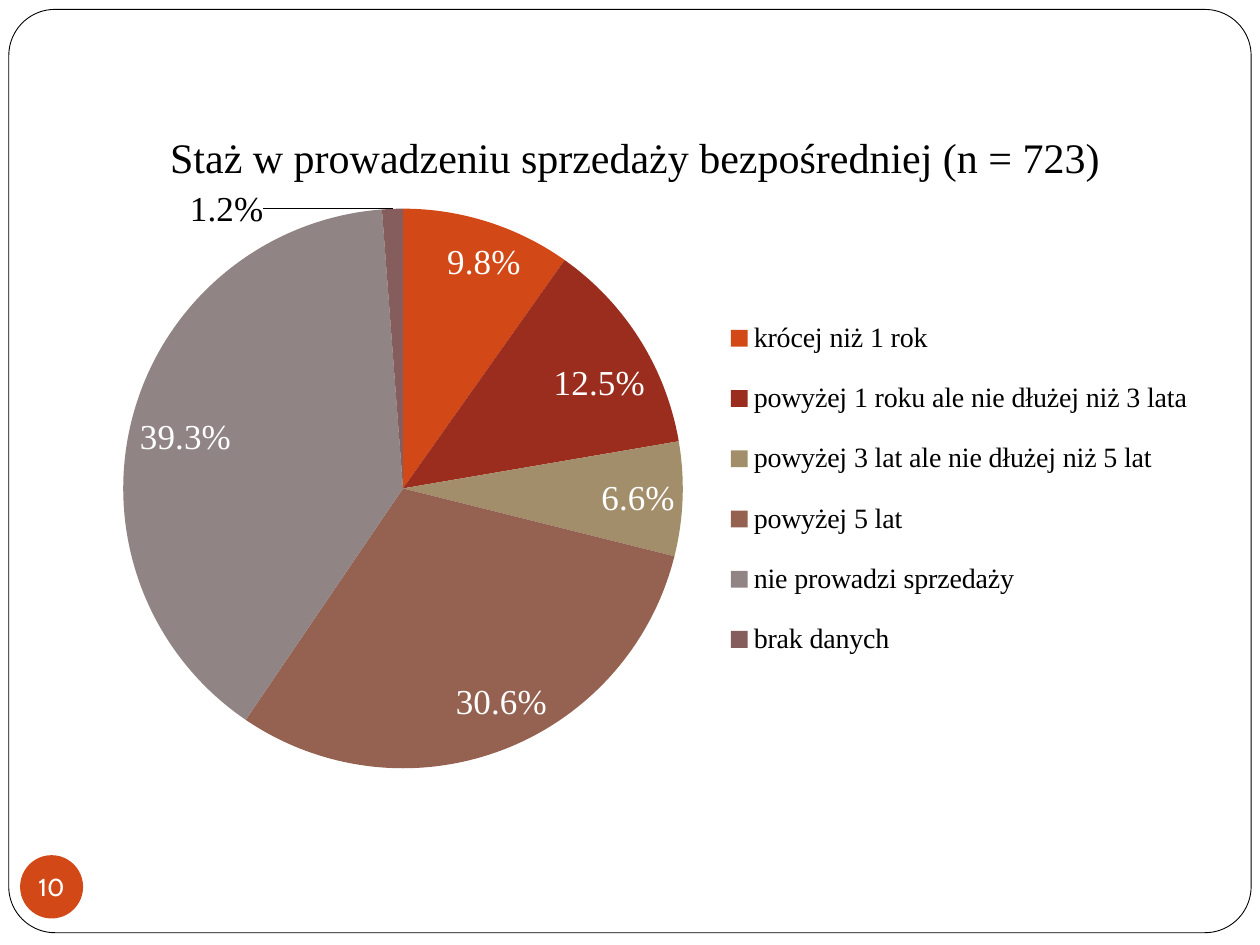
"""Build a slide with a pie chart of experience in direct sales."""
from dataclasses import dataclass
from typing import Any, NamedTuple

import pptx
import pptx.chart.data
import pptx.dml.color
import pptx.enum.chart
import pptx.enum.shapes
import pptx.enum.text
import pptx.oxml
import pptx.oxml.ns
import pptx.util


@dataclass(frozen=True)
class Theme:
    ink: str = "000000"
    paper: str = "FFFFFF"
    accent: str = "D34817"
    chart_font: str = "Times New Roman"
    number_font: str = "Cabin"
    title_size: int = 24
    label_size: int = 20
    legend_size: int = 16
    number_size: int = 14


class Box(NamedTuple):
    left: float
    top: float
    width: float
    height: float


class Slice(NamedTuple):
    category: str
    share: float
    color: str
    label_shift: tuple[float, float] | None = None
    label_outside: bool = False


THEME = Theme()
SLIDE_WIDTH = pptx.util.Inches(10)
SLIDE_HEIGHT = pptx.util.Inches(7.5)
TITLE = "Staż w prowadzeniu sprzedaży bezpośredniej (n = 723)"
SLICES = [
    Slice("krócej niż 1 rok", 0.098, THEME.accent, (0.03, 0.02)),
    Slice("powyżej 1 roku ale nie dłużej niż 3 lata", 0.125, "9B2D1F", (0.01, 0.03)),
    Slice("powyżej 3 lat ale nie dłużej niż 5 lat", 0.066, "A28E6A"),
    Slice("powyżej 5 lat", 0.306, "956251", (0.04, -0.03)),
    Slice("nie prowadzi sprzedaży", 0.393, "918485"),
    Slice("brak danych", 0.012, "855D5D", (-0.14, 0.04), True),
]


def rgb(color: str) -> pptx.dml.color.RGBColor:
    return pptx.dml.color.RGBColor.from_string(color)


def place(box: Box) -> tuple[int, int, int, int]:
    """Turn shares of the slide into lengths."""
    return (int(box.left * SLIDE_WIDTH), int(box.top * SLIDE_HEIGHT),
            int(box.width * SLIDE_WIDTH), int(box.height * SLIDE_HEIGHT))


def style_font(font: Any, size: int, color: str, face: str = THEME.chart_font) -> None:
    font.size = pptx.util.Pt(size)
    font.name = face
    font.bold = False
    font.color.rgb = rgb(color)


def write(frame: Any, text: str, *, size: int, color: str,
          face: str = THEME.chart_font, wrap: bool = False) -> None:
    """Put one centred line of formatted text in a frame without margins."""
    frame.margin_left = frame.margin_right = frame.margin_top = frame.margin_bottom = 0
    frame.word_wrap = wrap
    frame.vertical_anchor = pptx.enum.text.MSO_ANCHOR.MIDDLE
    line = frame.paragraphs[0]
    line.alignment = pptx.enum.text.PP_ALIGN.CENTER
    run = line.add_run()
    run.text = text
    style_font(run.font, size, color, face)


def draw_shape(slide: Any, kind: Any, box: Box, fill: str, line: str | None = None) -> Any:
    shape = slide.shapes.add_shape(kind, *place(box))
    shape.shadow.inherit = False
    shape.fill.solid()
    shape.fill.fore_color.rgb = rgb(fill)
    if line:
        shape.line.color.rgb = rgb(line)
        shape.line.width = pptx.util.Pt(0.5)
    else:
        shape.line.fill.background()
    return shape


def set_layout(element: Any, position: int, modes: dict[str, str],
               **shares: float) -> None:
    """Give a chart part a manual layout in shares of the chart."""
    for old in element.findall(pptx.oxml.ns.qn("c:layout")):
        element.remove(old)
    settings = "".join(f'<c:{tag} val="{value}"/>'
                       for tag, value in {**modes, **shares}.items())
    element.insert(position, pptx.oxml.parse_xml(
        f'<c:layout {pptx.oxml.ns.nsdecls("c")}>'
        f'<c:manualLayout>{settings}</c:manualLayout></c:layout>'))


def label_slices(series: Any) -> None:
    """Show shares inside the slices and move the labels that need room."""
    positions = pptx.enum.chart.XL_LABEL_POSITION
    labels = series.data_labels
    labels.show_value = True
    labels.number_format = "0.0%"
    labels.number_format_is_linked = False
    labels.position = positions.INSIDE_END
    style_font(labels.font, THEME.label_size, THEME.paper)

    moved = [(index, part) for index, part in enumerate(SLICES) if part.label_shift]
    for index, part in moved:
        label = series.points[index].data_label
        style_font(label.font, THEME.label_size,
                   THEME.ink if part.label_outside else THEME.paper)
        label.position = (positions.OUTSIDE_END if part.label_outside
                          else positions.INSIDE_END)
    label_nodes = labels._element.findall(pptx.oxml.ns.qn("c:dLbl"))
    for (_, part), node in zip(moved, label_nodes):
        shift_x, shift_y = part.label_shift
        set_layout(node, 1, {}, x=shift_x, y=shift_y)
        node.insert(2, pptx.oxml.parse_xml(
            f'<c:numFmt {pptx.oxml.ns.nsdecls("c")} formatCode="0.0%" sourceLinked="0"/>'))


def draw_pie(slide: Any, box: Box) -> None:
    data = pptx.chart.data.CategoryChartData(number_format="0.0%")
    data.categories = [part.category for part in SLICES]
    data.add_series("Series 1", [part.share for part in SLICES])
    chart = slide.shapes.add_chart(
        pptx.enum.chart.XL_CHART_TYPE.PIE, *place(box), data).chart
    style_font(chart.font, 10, THEME.ink)
    chart.has_title = False
    edges = {"xMode": "edge", "yMode": "edge"}

    chart.has_legend = True
    legend = chart.legend
    legend.position = pptx.enum.chart.XL_LEGEND_POSITION.RIGHT
    legend.include_in_layout = False
    style_font(legend.font, THEME.legend_size, THEME.ink)
    set_layout(legend._element, 1, edges, x=0.57, y=0.27, w=0.41, h=0.56)

    plot_area = chart._chartSpace.chart.plotArea
    set_layout(plot_area, 0, {"layoutTarget": "inner", **edges},
               x=0.067, y=0.143, w=0.474, h=0.813)

    series = chart.plots[0].series[0]
    for index, part in enumerate(SLICES):
        fill = series.points[index].format.fill
        fill.solid()
        fill.fore_color.rgb = rgb(part.color)
    label_slices(series)


def main() -> None:
    deck = pptx.Presentation()
    deck.slide_width, deck.slide_height = SLIDE_WIDTH, SLIDE_HEIGHT
    slide = deck.slides.add_slide(deck.slide_layouts[6])
    shapes = pptx.enum.shapes.MSO_SHAPE

    frame = draw_shape(slide, shapes.ROUNDED_RECTANGLE,
                       Box(0.007, 0.01, 0.986, 0.987 - 0.01), THEME.paper, THEME.ink)
    frame.adjustments[0] = 0.05

    badge = draw_shape(slide, shapes.OVAL, Box(0.016, 0.905, 0.05, 0.067), THEME.accent)
    write(badge.text_frame, "10", size=THEME.number_size, color=THEME.paper,
          face=THEME.number_font)

    draw_pie(slide, Box(0.035, 0.112, 0.937, 0.737))
    heading = slide.shapes.add_textbox(*place(Box(0.1, 0.136, 0.808, 0.06)))
    write(heading.text_frame, TITLE, size=THEME.title_size, color=THEME.ink, wrap=True)
    deck.save("out.pptx")


if __name__ == "__main__":
    main()
